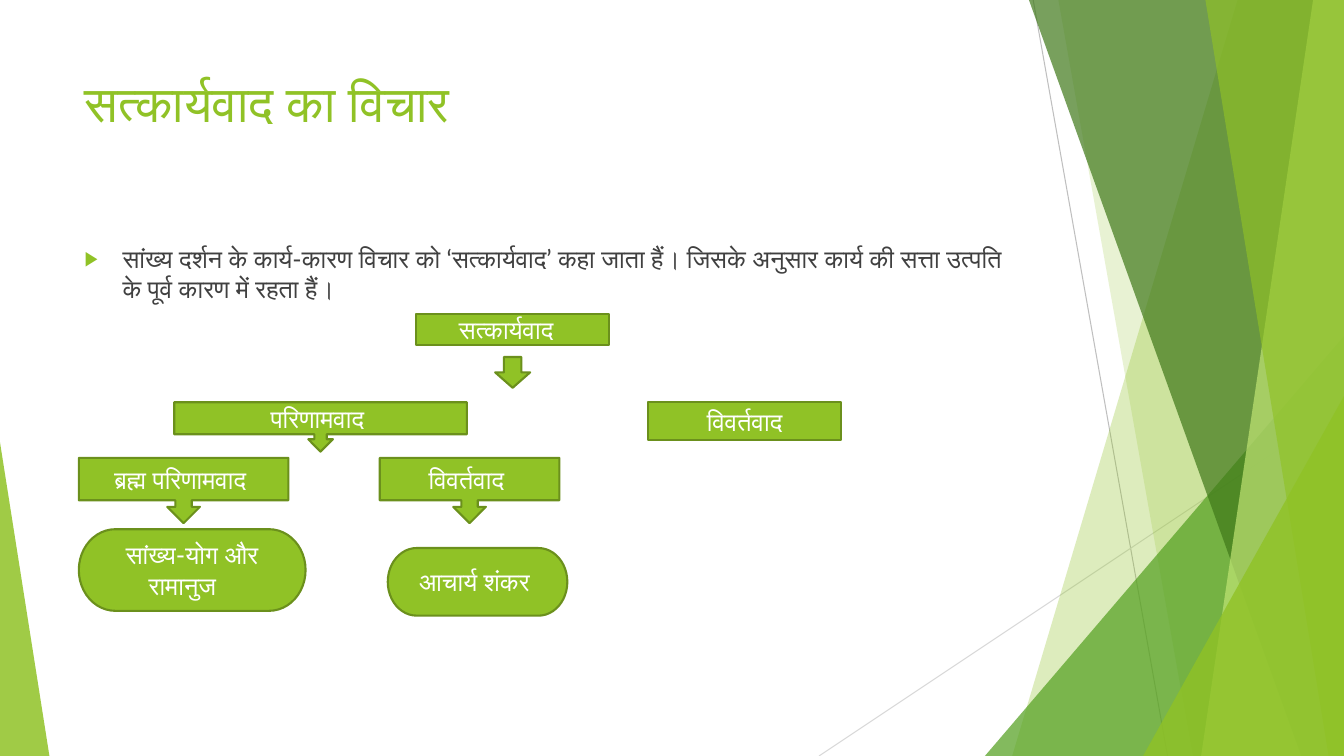
from lxml import etree
from pptx import Presentation
from pptx.dml.color import RGBColor
from pptx.enum.shapes import MSO_CONNECTOR, MSO_SHAPE
from pptx.enum.text import MSO_ANCHOR, MSO_AUTO_SIZE, PP_ALIGN
from pptx.oxml.ns import qn
from pptx.util import Pt

RECT = MSO_SHAPE.RECTANGLE
ARROW = MSO_SHAPE.DOWN_ARROW
CALL = MSO_SHAPE.DOWN_ARROW_CALLOUT
PILL = MSO_SHAPE.FLOWCHART_TERMINATOR
WEDGE = MSO_SHAPE.ISOSCELES_TRIANGLE
STRAIGHT = MSO_CONNECTOR.STRAIGHT
TOP, MIDDLE = MSO_ANCHOR.TOP, MSO_ANCHOR.MIDDLE
LEFT, CENTER = PP_ALIGN.LEFT, PP_ALIGN.CENTER
FIXED = MSO_AUTO_SIZE.NONE

LIME = RGBColor(0x90, 0xC2, 0x26)
GREEN = RGBColor(0x54, 0xA0, 0x21)
FOREST = RGBColor(0x3F, 0x78, 0x19)
PALE = RGBColor(0xC0, 0xE4, 0x74)
OLIVE = RGBColor(0x6B, 0x90, 0x1C)
WHITE = RGBColor(0xFF, 0xFF, 0xFF)
DARK = RGBColor(0x40, 0x40, 0x40)
GREY = RGBColor(0xBF, 0xBF, 0xBF)
SILVER = RGBColor(0xD9, 0xD9, 0xD9)

WIDTH, HEIGHT = 960, 540
INSET = 7.2


class Deck:
    """Holds the style and the current slide."""

    font = "Lato"
    size = 18

    def __init__(self):
        self.file = Presentation()
        self.file.slide_width, self.file.slide_height = Pt(WIDTH), Pt(HEIGHT)
        self.slide = self.file.slides.add_slide(self.file.slide_layouts[1])
        self.shapes = self.slide.shapes

    def say(self, para, text, color, size):
        run = para.add_run()
        run.text = text
        run.font.name = self.font
        run.font.size = Pt(size)
        run.font.color.rgb = color
        script = etree.SubElement(run.font._element, qn("a:cs"))
        script.set("typeface", self.font)

    def line(self, start, end, color):
        line = self.shapes.add_connector(STRAIGHT, *map(Pt, start + end))
        line.line.color.rgb = color
        line.line.width = Pt(0.75)
        etree.SubElement(line._element.spPr, qn("a:effectLst"))

    def tint(self, shape, color, share):
        shape.shadow.inherit = False
        shape.fill.solid()
        shape.fill.fore_color.rgb = color
        shape.line.fill.background()
        tone = shape._element.spPr.find(qn("a:solidFill"))[0]
        etree.SubElement(tone, qn("a:alpha")).set("val", str(share * 1000))

    def band(self, top, base, color, share):
        edge = self.shapes.build_freeform(Pt(top), 0)
        edge.add_line_segments([(Pt(WIDTH), 0), (Pt(WIDTH), Pt(HEIGHT)),
                                (Pt(base), Pt(HEIGHT))])
        self.tint(edge.convert_to_shape(), color, share)

    def wedge(self, left, top, width, peak, color, share):
        shape = self.shapes.add_shape(
            WEDGE, Pt(left), Pt(top), Pt(width), Pt(HEIGHT - top))
        shape.adjustments[0] = peak
        self.tint(shape, color, share)

    def hold(self, index, place, text, color, size):
        box = self.slide.placeholders[index]
        box.left, box.top, box.width, box.height = map(Pt, place)
        box._element.getparent().append(box._element)
        frame = box.text_frame
        frame.auto_size = FIXED
        frame.vertical_anchor = TOP
        para = frame.paragraphs[0]
        para.alignment = LEFT
        self.say(para, text, color, size)
        return para

    def title(self, place, text):
        self.hold(0, place, text, LIME, 36)

    def body(self, place, text):
        para = self.hold(1, place, text, DARK, self.size)
        para.space_before = Pt(10)
        props = para._p.get_or_add_pPr()
        props.set("marL", str(Pt(27)))
        props.set("indent", str(Pt(-27)))
        tone = etree.SubElement(props, qn("a:buClr"))
        etree.SubElement(tone, qn("a:srgbClr")).set("val", str(LIME))
        etree.SubElement(props, qn("a:buSzPct")).set("val", "80000")
        etree.SubElement(props, qn("a:buChar")).set("char", "▶")

    def node(self, kind, place, text="", pad=0, indent=0):
        shape = self.shapes.add_shape(kind, *map(Pt, place))
        shape.shadow.inherit = False
        shape.fill.solid()
        shape.fill.fore_color.rgb = LIME
        shape.line.color.rgb = OLIVE
        shape.line.width = Pt(1.5)
        if text:
            frame = shape.text_frame
            frame.word_wrap = True
            frame.vertical_anchor = MIDDLE
            frame.margin_right = Pt(INSET + pad)
            para = frame.paragraphs[0]
            para.alignment = CENTER
            para._p.get_or_add_pPr().set("indent", str(Pt(indent)))
            self.say(para, text, WHITE, self.size)


def main():
    deck = Deck()
    deck.line((738, 0), (834, HEIGHT), GREY)
    deck.line((WIDTH, 290), (585, HEIGHT), SILVER)
    deck.band(884, 723, LIME, 30)
    deck.band(756, 852, LIME, 20)
    deck.wedge(703.5, 240, 256.5, 1, GREEN, 72)
    deck.band(735, 929.5, FOREST, 70)
    deck.band(938, 858, PALE, 70)
    deck.band(861, 949, LIME, 65)
    deck.wedge(816.5, 283, 143.5, 1, LIME, 80)
    deck.wedge(0, 316, 35.3, 0, LIME, 85)

    deck.title((53.3, 48, 677, 104), "सत्कार्यवाद का विचार")
    deck.body((53.3, 170, 677, 305),
              "सांख्य दर्शन के कार्य-कारण विचार को ‘सत्कार्यवाद’ कहा जाता हैं। "
              "जिसके अनुसार कार्य की सत्ता उत्पति के पूर्व कारण में रहता हैं।")

    deck.node(RECT, (297.3, 224.5, 137.7, 22), "सत्कार्यवाद", 9)
    deck.node(ARROW, (353.7, 255, 25, 22))
    deck.node(RECT, (463, 287.3, 137.7, 27), "विवर्तवाद")
    deck.node(CALL, (124.5, 287.3, 209, 35.3), "परिणामवाद", 4.5)
    deck.node(CALL, (56.3, 327, 149.7, 46.7), "ब्रह्म परिणामवाद", 4.5)
    deck.node(CALL, (271.3, 327, 128.3, 46.7), "विवर्तवाद", 4.5)
    deck.node(PILL, (56.3, 378, 162, 58.3), "सांख्य-योग और रामानुज", 14, 14)
    deck.node(PILL, (277, 391.5, 128.3, 48.3), "आचार्य शंकर", 4.5)
    deck.file.save("out.pptx")


if __name__ == "__main__":
    main()
